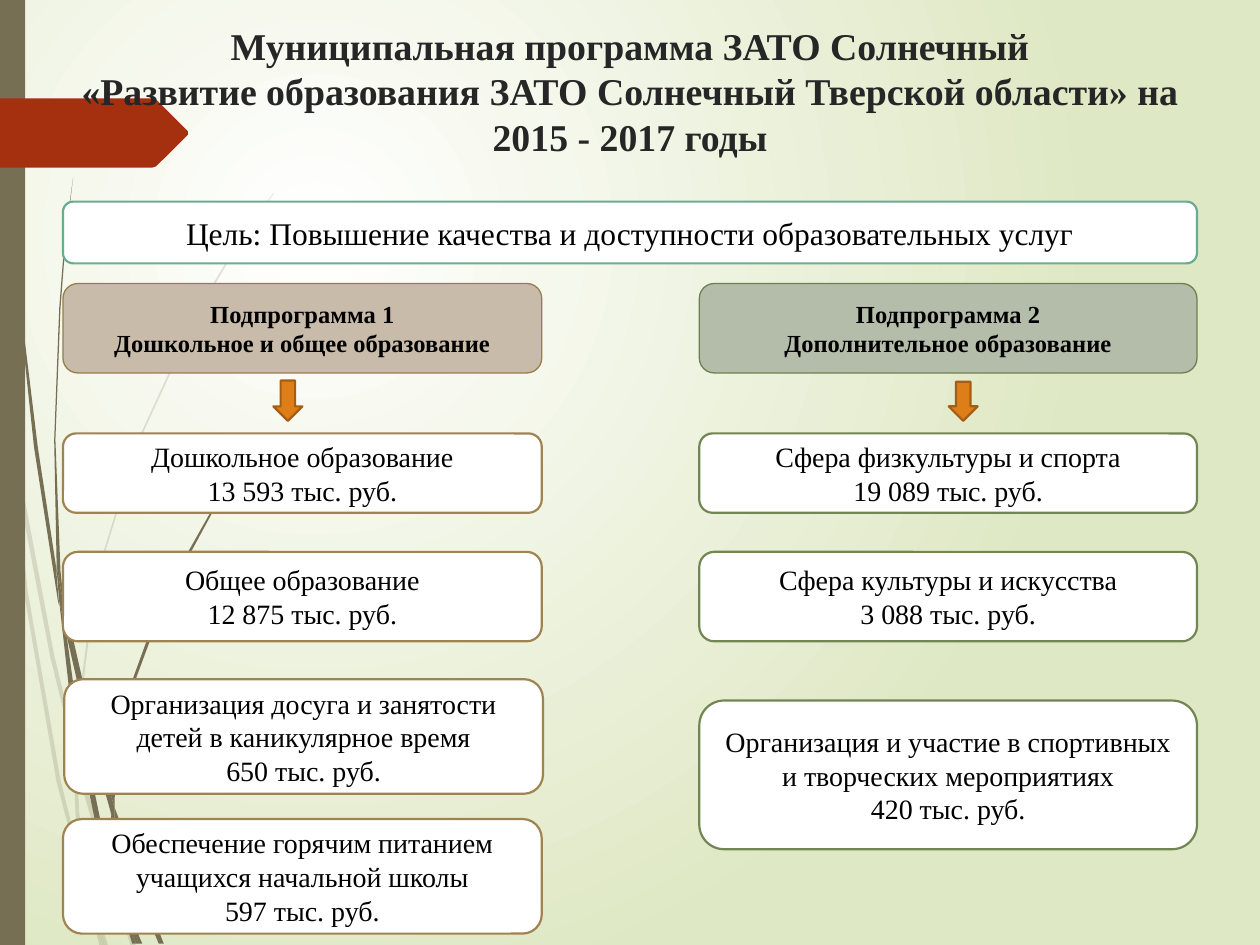
from pptx import Presentation
from pptx import oxml
from pptx import util as u
from pptx.dml import color
from pptx.enum import shapes, text
from pptx.oxml import ns

PX = 9144
FONT = "Times New Roman"
OLIVE = "766F54"
KIND = shapes.MSO_SHAPE

PALE_STEMS = [
    [(8, 350), (6, 322), (0, 282), (0, 299), (7, 344)],
    [(40, 522), (59, 599), (59, 586), (43, 520), (10, 345), (12, 376)],
    [(64, 607), (61, 596), (61, 610), (85, 694), (104, 751), (108, 751), (88, 692)],
    [(83, 751), (86, 751), (73, 711)],
    [(64, 683), (48, 619), (22, 469), (12, 376), (8, 350), (19, 470), (45, 621),
     (64, 693), (70, 714), (69, 707)],
    [(58, 599), (60, 646), (64, 683), (67, 692), (73, 711), (72, 706), (63, 646),
     (61, 610), (61, 608)],
    [(61, 584), (76, 462), (111, 349), (159, 245), (187, 198), (201, 175), (217, 154),
     (217, 153), (201, 175), (186, 197), (158, 244), (110, 348), (75, 461), (59, 584),
     (59, 586), (61, 596)],
    [(70, 714), (79, 751), (82, 751)],
    [(67, 692), (65, 683), (69, 707), (70, 714), (82, 751), (83, 751), (73, 711)],
]
DARK_STEMS = [
    [(5, 110), (14, 233), (27, 355), (46, 477), (47, 481), (45, 457), (45, 453),
     (30, 355), (15, 232), (6, 109), (4, 48), (3, 0), (2, 0), (3, 48)],
    [(73, 592), (88, 645), (88, 633), (88, 631), (77, 590), (50, 472), (53, 505)],
    [(94, 649), (91, 641), (91, 656), (109, 708), (126, 749), (130, 749), (113, 706)],
    [(91, 691), (81, 657), (60, 556), (53, 505), (47, 477), (56, 557), (77, 659),
     (92, 708), (97, 722), (96, 717)],
    [(50, 472), (48, 453), (44, 349), (48, 245), (52, 193), (58, 141), (51, 193),
     (47, 245), (43, 349), (45, 449), (49, 472)],
    [(110, 749), (113, 749), (100, 719)],
    [(47, 477), (53, 505), (50, 472), (49, 472), (45, 449), (45, 453)],
    [(91, 633), (103, 552), (131, 476), (169, 406), (191, 374), (203, 359), (216, 344),
     (215, 344), (203, 358), (191, 373), (168, 405), (129, 474), (101, 551), (88, 631),
     (91, 641)],
    [(97, 722), (105, 749), (108, 749)],
    [(88, 645), (91, 691), (96, 706), (100, 719), (100, 716), (91, 656), (90, 651)],
    [(88, 645), (90, 651), (91, 656), (91, 641), (88, 631), (88, 633)],
    [(96, 706), (91, 691), (96, 717), (97, 722), (108, 749), (110, 749), (100, 719)],
]
POINTER = [(0, 78), (121, 78), (124, 79), (149, 104), (149, 107), (124, 132),
           (121, 133), (0, 133)]

COLUMNS = [
    {"left": 50, "width": 380, "header": "Подпрограмма 1\nДошкольное и общее образование",
     "header_fill": "C8BBAA", "header_line": "987D4D", "line": "9F8351",
     "arrow": (217, 302, 23, 32),
     "cards": [
         (50, 344, 63, "Дошкольное образование\n13 593 тыс. руб."),
         (50, 438, 71, "Общее образование\n12 875 тыс. руб."),
         (51, 539, 91, "Организация досуга и занятости детей в каникулярное время\n650 тыс. руб."),
         (50, 650, 91, "Обеспечение горячим питанием учащихся начальной школы\n597 тыс. руб.")]},
    {"left": 555, "width": 395, "header": "Подпрограмма 2\nДополнительное образование",
     "header_fill": "B4BCAA", "header_line": "6D804F", "line": "728653",
     "arrow": (753, 303, 23, 31),
     "cards": [
         (555, 344, 63, "Сфера физкультуры и спорта\n19 089 тыс. руб."),
         (555, 438, 71, "Сфера культуры и искусства\n3 088 тыс. руб."),
         (555, 556, 118, "Организация и участие в спортивных и творческих мероприятиях\n420 тыс. руб.")]},
]


def rgb(value):
    return color.RGBColor.from_string(value)


class SlideBuilder:
    def __init__(self, presentation):
        self.slide = presentation.slides.add_slide(presentation.slide_layouts[5])

    def background(self, inner, outer):
        xml = (f'<p:bg {ns.nsdecls("p", "a")}><p:bgPr><a:gradFill rotWithShape="1"><a:gsLst>'
               f'<a:gs pos="0"><a:srgbClr val="{inner}"/></a:gs>'
               f'<a:gs pos="100000"><a:srgbClr val="{outer}"/></a:gs></a:gsLst>'
               '<a:path path="circle"><a:fillToRect l="50000" t="50000" r="100000" b="100000"/>'
               '</a:path></a:gradFill><a:effectLst/></p:bgPr></p:bg>')
        self.slide.element.cSld.insert(0, oxml.parse_xml(xml))

    def paint(self, shape, fill, line=None, weight=1.25):
        shape.shadow.inherit = False
        shape.fill.solid()
        shape.fill.fore_color.rgb = rgb(fill)
        if line:
            shape.line.color.rgb = rgb(line)
            shape.line.width = u.Pt(weight)
        else:
            shape.line.fill.background()

    def label(self, shape, words, size, ink, bold=False):
        frame = shape.text_frame
        frame.word_wrap = True
        frame.vertical_anchor = text.MSO_ANCHOR.MIDDLE
        frame.text = words
        for paragraph in frame.paragraphs:
            paragraph.alignment = text.PP_ALIGN.CENTER
            paragraph.font.name = FONT
            paragraph.font.size = u.Pt(size)
            paragraph.font.bold = bold
            paragraph.font.color.rgb = rgb(ink)

    def outline(self, points, fill, opacity=100):
        builder = self.slide.shapes.build_freeform(*points[0], scale=PX)
        builder.add_line_segments(points[1:], close=True)
        shape = builder.convert_to_shape()
        self.paint(shape, fill)
        if opacity < 100:
            tone = shape.element.spPr.find(".//" + ns.qn("a:srgbClr"))
            tone.append(oxml.parse_xml(
                f'<a:alpha {ns.nsdecls("a")} val="{opacity * 1000}"/>'))

    def shape(self, kind, box, fill, line=None, weight=1.25):
        shape = self.slide.shapes.add_shape(kind, *(value * PX for value in box))
        self.paint(shape, fill, line, weight)
        return shape

    def card(self, kind, box, words, fill, line, size=16, weight=1.25, bold=False):
        shape = self.shape(kind, box, fill, line, weight)
        self.label(shape, words, size, "000000", bold)

    def title(self, box, words, size):
        title = self.slide.shapes.title
        title.left, title.top, title.width, title.height = (value * PX for value in box)
        self.label(title, words, size, "262626", True)
        title.text_frame.auto_size = text.MSO_AUTO_SIZE.NONE
        self.slide.shapes.element.append(title.element)


def main():
    presentation = Presentation()
    presentation.slide_width, presentation.slide_height = 1000 * PX, 750 * PX
    page = SlideBuilder(presentation)
    page.background("FFFFFF", "DFE8C4")
    for stem in PALE_STEMS:
        page.outline(stem, OLIVE, 20)
    for stem in DARK_STEMS:
        page.outline(stem, OLIVE)
    page.shape(KIND.RECTANGLE, (0, 0, 20, 750), OLIVE)
    page.outline(POINTER, "A53010")
    page.title((50, 13, 900, 118),
               "Муниципальная программа ЗАТО Солнечный\v"
               "«Развитие образования ЗАТО Солнечный Тверской области» на 2015 - 2017 годы", 21.6)
    page.card(KIND.FLOWCHART_ALTERNATE_PROCESS, (50, 160, 900, 49),
              "Цель: Повышение качества и доступности образовательных услуг",
              "FFFFFF", "6AAC91", size=18)
    for column in COLUMNS:
        page.card(KIND.FLOWCHART_ALTERNATE_PROCESS,
                  (column["left"], 225, column["width"], 71), column["header"],
                  column["header_fill"], column["header_line"], size=14, weight=0.75, bold=True)
        page.shape(KIND.DOWN_ARROW, column["arrow"], "DE7E18", "A45D12")
        for left, top, height, words in column["cards"]:
            page.card(KIND.ROUNDED_RECTANGLE, (left, top, column["width"], height), words,
                      "FFFFFF", column["line"])
    presentation.save("out.pptx")


if __name__ == "__main__":
    main()
